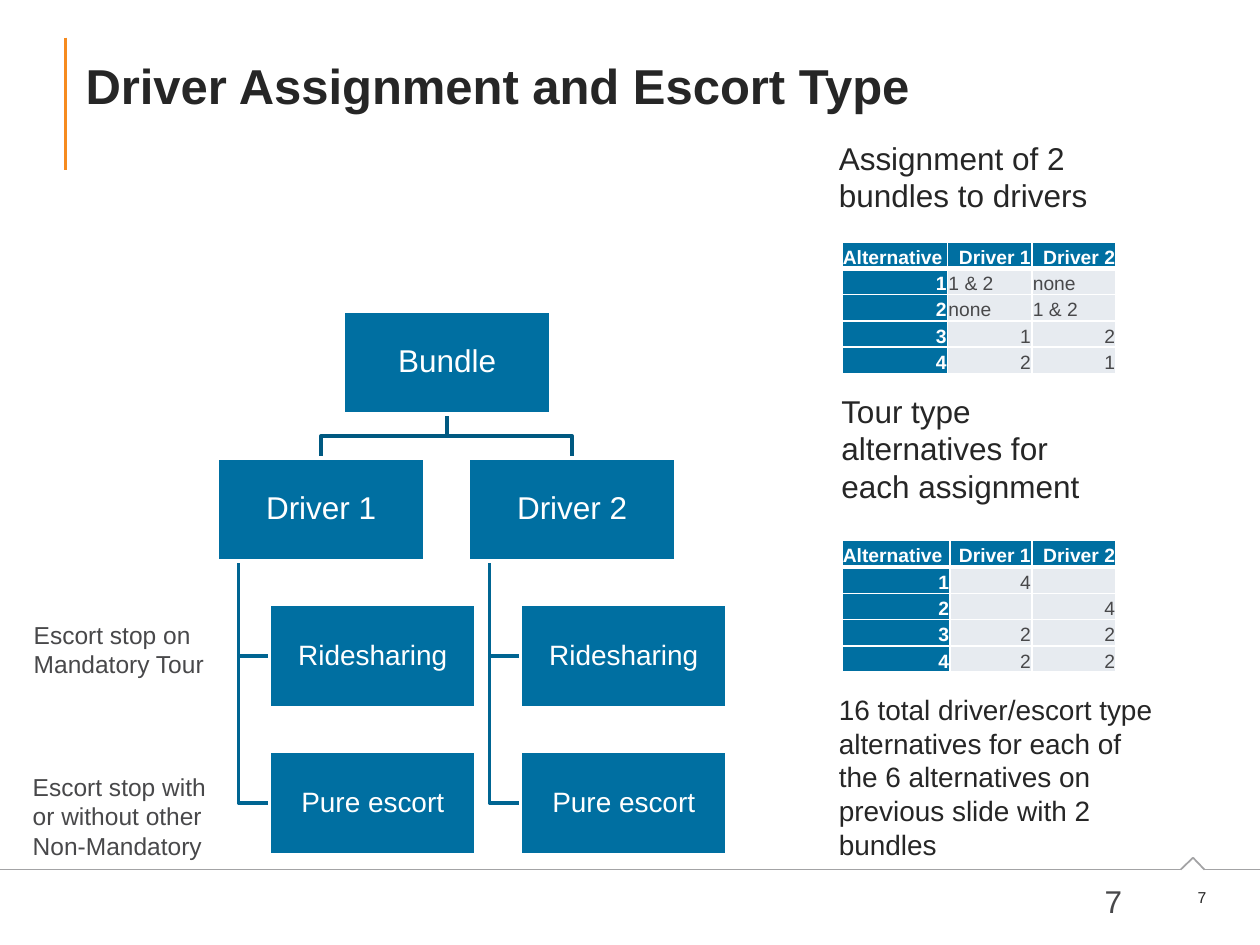
from itertools import pairwise
from lxml import etree
from pptx import Presentation
from pptx import util as u
from pptx.dml.color import RGBColor
from pptx.enum import shapes, text
from pptx.oxml.ns import qn

HUES = {"blue": "006FA1", "stem": "005981", "twig": "006592", "pale": "E7EBF0",
        "dark": "262626", "grey": "48484A", "rule": "A3A3A5", "mark": "F68B1F",
        "white": "FFFFFF"}
HUES_RGB = {name: RGBColor.from_string(code) for name, code in HUES.items()}
ALIGN = text.PP_ALIGN


def write(frame, words, size, hue, align=ALIGN.LEFT, bold=False):
    frame.word_wrap = True
    para = frame.paragraphs[0]
    para.text = words
    para.alignment = align
    para.font.name = "Arial"
    para.font.size = u.Pt(size)
    para.font.bold = bold
    para.font.color.rgb = HUES_RGB[hue]
    return para


def trace(points, hue):
    spots = [(u.Cm(x), u.Cm(y)) for x, y in points]
    maker = slide.shapes.build_freeform(*spots[0])
    maker.add_line_segments(spots[1:], close=False)
    line = maker.convert_to_shape()
    line.shadow.inherit = False
    line.fill.background()
    line.line.color.rgb = HUES_RGB[hue]
    line.line.width = u.Pt(2)


deck = Presentation()
deck.slide_width, deck.slide_height = u.Cm(25.4), u.Cm(19.05)
slide = deck.slides.add_slide(deck.slide_layouts[5])

title = slide.shapes.title
title.left, title.top, title.width, title.height = u.Cm(1.47), u.Cm(0.38), u.Cm(22.48), u.Cm(2.67)
title.text_frame.vertical_anchor = text.MSO_ANCHOR.MIDDLE
write(title.text_frame, "Driver Assignment and Escort Type", 28, "dark", bold=True)

rules = [([(1.32, 0.76), (1.32, 3.43)], "mark", 1.5),
         ([(0, 17.53), (23.8, 17.53), (24.05, 17.29), (24.28, 17.53), (25.4, 17.53)], "rule", 1)]
for points, hue, width in rules:
    for start, end in pairwise(points):
        rule = slide.shapes.add_connector(shapes.MSO_CONNECTOR.STRAIGHT,
                                          *map(u.Cm, start + end))
        rule.line.color.rgb = HUES_RGB[hue]
        rule.line.width = u.Pt(width)
        etree.SubElement(rule._element.spPr, qn("a:effectLst"))

wide, high = 4.17, 2.08
tops = [6.27 + 2.96 * level for level in range(4)]
root = 6.93
boxes = [("Bundle", root, tops[0], 18)]
for index, left in enumerate((4.39, 9.45)):
    boxes.append((f"Driver {index + 1}", left, tops[1], 18))
    hub, mid = root + wide / 2, (tops[0] + high + tops[1]) / 2
    end = left + wide / 2
    trace([(hub, tops[0] + high), (hub, mid), (end, mid), (end, tops[1])], "stem")
    for kind, top in zip(("Ridesharing", "Pure escort"), tops[2:]):
        boxes.append((kind, left + 1.04, top, 16))
        trunk, turn = left + 0.42, top + high / 2
        trace([(trunk, tops[1] + high), (trunk, turn), (left + 1.04, turn)], "twig")

for words, left, top, size in boxes:
    box = slide.shapes.add_shape(shapes.MSO_SHAPE.RECTANGLE,
                                 *map(u.Cm, (left, top, wide, high)))
    box.shadow.inherit = False
    box.fill.solid()
    box.fill.fore_color.rgb = HUES_RGB["blue"]
    box.line.color.rgb = HUES_RGB["white"]
    box.line.width = u.Pt(2)
    frame = box.text_frame
    frame.margin_left = frame.margin_right = frame.margin_top = frame.margin_bottom = u.Cm(0.03)
    frame.vertical_anchor = text.MSO_ANCHOR.MIDDLE
    write(frame, words, size, "white", ALIGN.CENTER).line_spacing = 0.9

notes = [
    ("Escort stop on Mandatory Tour", 0.43, 12.37, 4.24, 1.45, 14, "grey", ALIGN.LEFT),
    ("Escort stop with or without other Non-Mandatory", 0.41, 15.44, 4.24, 2.06, 14, "grey", ALIGN.LEFT),
    ("Assignment of 2 bundles to drivers", 16.66, 2.67, 6.15, 1.8, 18, "dark", ALIGN.LEFT),
    ("Tour type alternatives for each assignment", 16.71, 7.77, 6.15, 2.57, 18, "dark", ALIGN.LEFT),
    ("16 total driver/escort type alternatives for each of the 6 alternatives on previous slide with 2 bundles",
     16.66, 13.84, 6.99, 3.68, 16, "dark", ALIGN.LEFT),
    ("7", 22.02, 17.65, 2.11, 1.02, 18, "grey", ALIGN.LEFT),
    ("7", 23.5, 17.78, 1.07, 0.64, 9, "dark", ALIGN.RIGHT),
]
for words, left, top, width, height, size, hue, align in notes:
    note = slide.shapes.add_textbox(*map(u.Cm, (left, top, width, height)))
    write(note.text_frame, words, size, hue, align)

head = ["Alternative", "Driver 1", "Driver 2"]
grids = [
    (4.88, (2.13, 1.7, 1.7),
     [head, ["1", "1 & 2", "none"], ["2", "none", "1 & 2"], ["3", "1", "2"], ["4", "2", "1"]]),
    (10.9, (2.18, 1.65, 1.7),
     [head, ["1", "4", ""], ["2", "", "4"], ["3", "2", "2"], ["4", "2", "2"]]),
]
for top, widths, rows in grids:
    table = slide.shapes.add_table(len(rows), len(widths), u.Cm(16.97), u.Cm(top),
                                   u.Cm(sum(widths)), u.Cm(0.53 * len(rows))).table
    for col, width in zip(table.columns, widths):
        col.width = u.Cm(width)
    for r, row in enumerate(rows):
        table.rows[r].height = u.Cm(0.53)
        for c, words in enumerate(row):
            cell = table.cell(r, c)
            cell.margin_left = cell.margin_right = cell.margin_top = u.Cm(0.02)
            cell.margin_bottom = 0
            cell.vertical_anchor = text.MSO_ANCHOR.BOTTOM
            for side in "LRTB":
                thick = 3 if (r, side) in ((0, "B"), (1, "T")) else 1
                edge = etree.SubElement(cell._tc.get_or_add_tcPr(), qn(f"a:ln{side}"),
                                        w=str(u.Pt(thick)))
                fill = etree.SubElement(edge, qn("a:solidFill"))
                etree.SubElement(fill, qn("a:srgbClr"), val=HUES["white"])
            label = r == 0 or c == 0
            cell.fill.solid()
            cell.fill.fore_color.rgb = HUES_RGB["blue" if label else "pale"]
            right = words.isdigit() or words.startswith("Driver")
            para = write(cell.text_frame, words, 11, "white" if label else "grey",
                         ALIGN.RIGHT if right else ALIGN.LEFT, label)
            if not words:
                etree.SubElement(para._p, qn("a:endParaRPr"), sz="1100")

deck.save("out.pptx")
